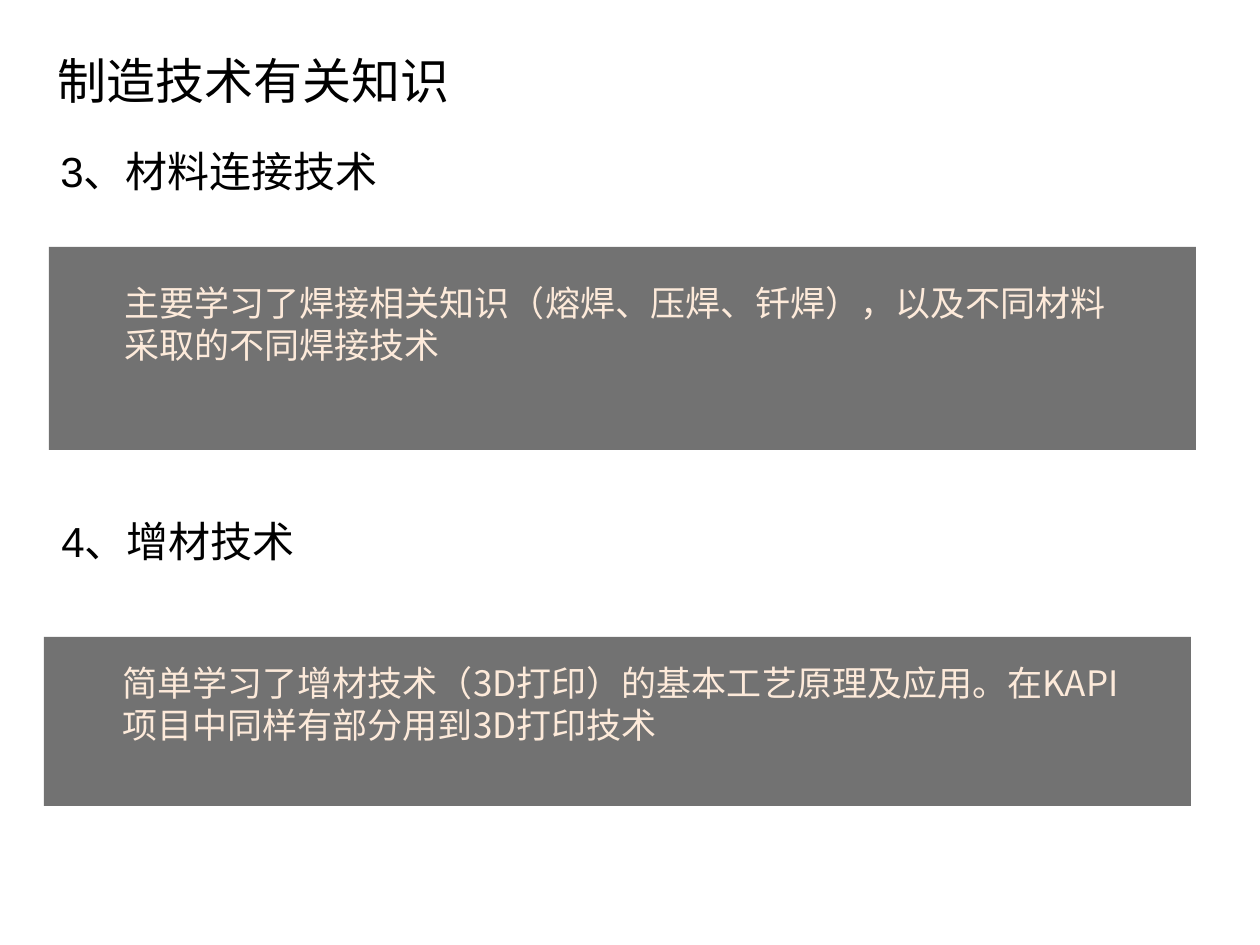
from lxml.etree import SubElement
from pptx import Presentation
from pptx.dml.color import RGBColor
from pptx.enum.shapes import MSO_SHAPE
from pptx.enum.text import MSO_ANCHOR, PP_ALIGN
from pptx.oxml.ns import qn
from pptx.util import Inches, Pt

BLACK = RGBColor(0x00, 0x00, 0x00)
GREY = RGBColor(0x33, 0x33, 0x33)
CREAM = RGBColor(0xFD, 0xEA, 0xDA)
NOTO = "Noto Sans CJK SC"
PX = Inches(1) // 126


class Board:
    """Holds the style and the current slide."""

    def __init__(self, deck):
        self.slide = deck.slides.add_slide(deck.slide_layouts[5])

    def place(self, *box):
        return [n * PX for n in box]

    def style(self, shape, parts, size, color, anchor=MSO_ANCHOR.TOP, wrap=True):
        frame = shape.text_frame
        frame.word_wrap = wrap
        frame.vertical_anchor = anchor
        line = frame.paragraphs[0]
        line.alignment = PP_ALIGN.LEFT
        for text, face in parts:
            run = line.add_run()
            run.text = text
            run.font.name = face
            run.font.size = Pt(size)
            run.font.color.rgb = color

    def title(self, box, text):
        shape = self.slide.shapes.title
        shape.left, shape.top, shape.width, shape.height = self.place(*box)
        self.style(shape, [(text, NOTO)], 28, BLACK, wrap=False)

    def panel(self, box):
        shape = self.slide.shapes.add_shape(MSO_SHAPE.RECTANGLE, *self.place(*box))
        shape.shadow.inherit = False
        shape.line.fill.background()
        shape.fill.solid()
        shape.fill.fore_color.rgb = GREY
        tint = shape.fill._xPr.find(qn("a:solidFill"))[0]
        SubElement(tint, qn("a:alpha"), val="69000")

    def text(self, box, parts, size, color, anchor=MSO_ANCHOR.TOP):
        shape = self.slide.shapes.add_textbox(*self.place(*box))
        self.style(shape, parts, size, color, anchor)


def main():
    deck = Presentation()
    deck.slide_width, deck.slide_height = Inches(10), Inches(7.5)
    board = Board(deck)
    board.title((45, 44, 421, 72), "制造技术有关知识")
    board.panel((49, 247, 1147, 203))
    board.panel((44, 637, 1147, 169))
    board.text((48, 139, 1040, 63), [("3", "Arial"), ("、材料连接技术", "Calibri")], 24, BLACK)
    board.text((112, 275, 1033, 97), [
        ("主要学习了焊接相关知识（熔焊、压焊、钎焊），以及不同材料采取的不同焊接技术", "Arial")], 20, CREAM)
    board.text((49, 488, 367, 105), [("4、增材技术", "Arial")], 24, BLACK, MSO_ANCHOR.MIDDLE)
    board.text((110, 655, 1037, 97), [
        ("简单学习了增材技术（3D打印）的基本工艺原理及应用。在KAPI项目中同样有部分用到3D打印技术", NOTO)], 20, CREAM)
    deck.save("out.pptx")


if __name__ == "__main__":
    main()
